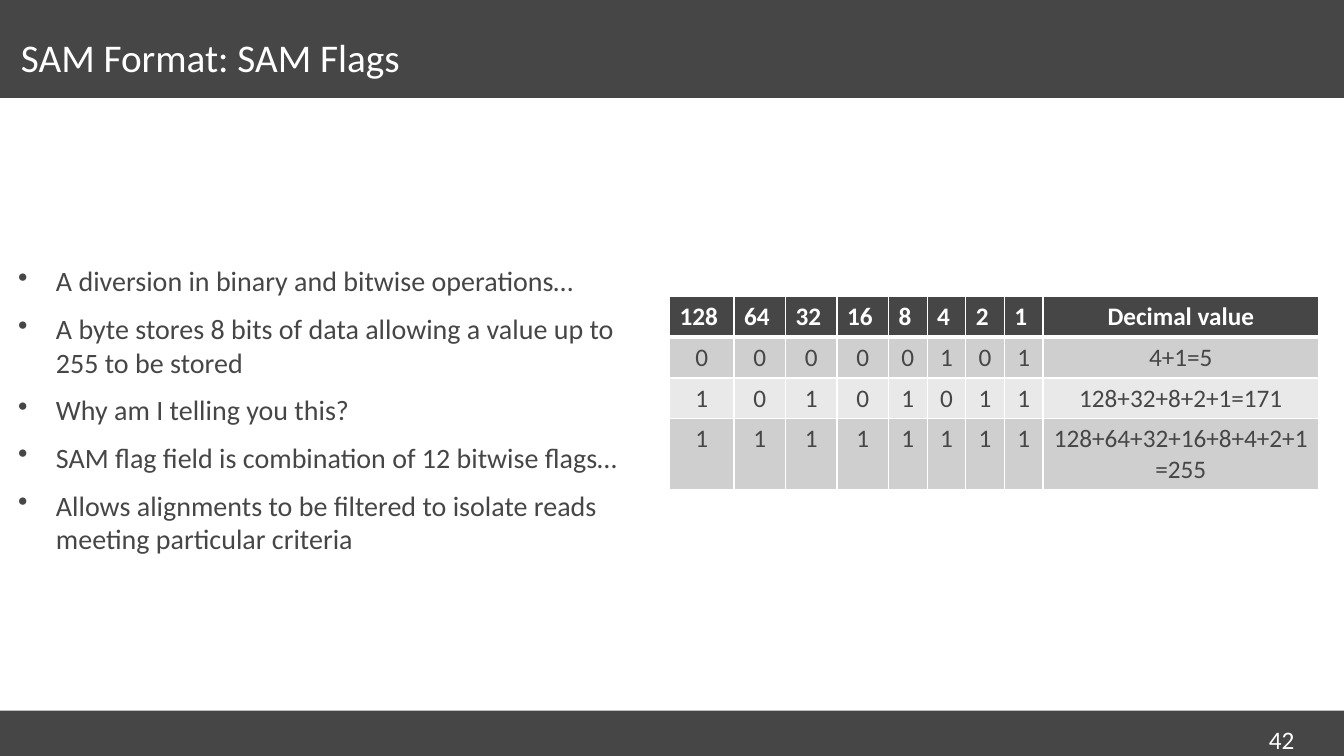
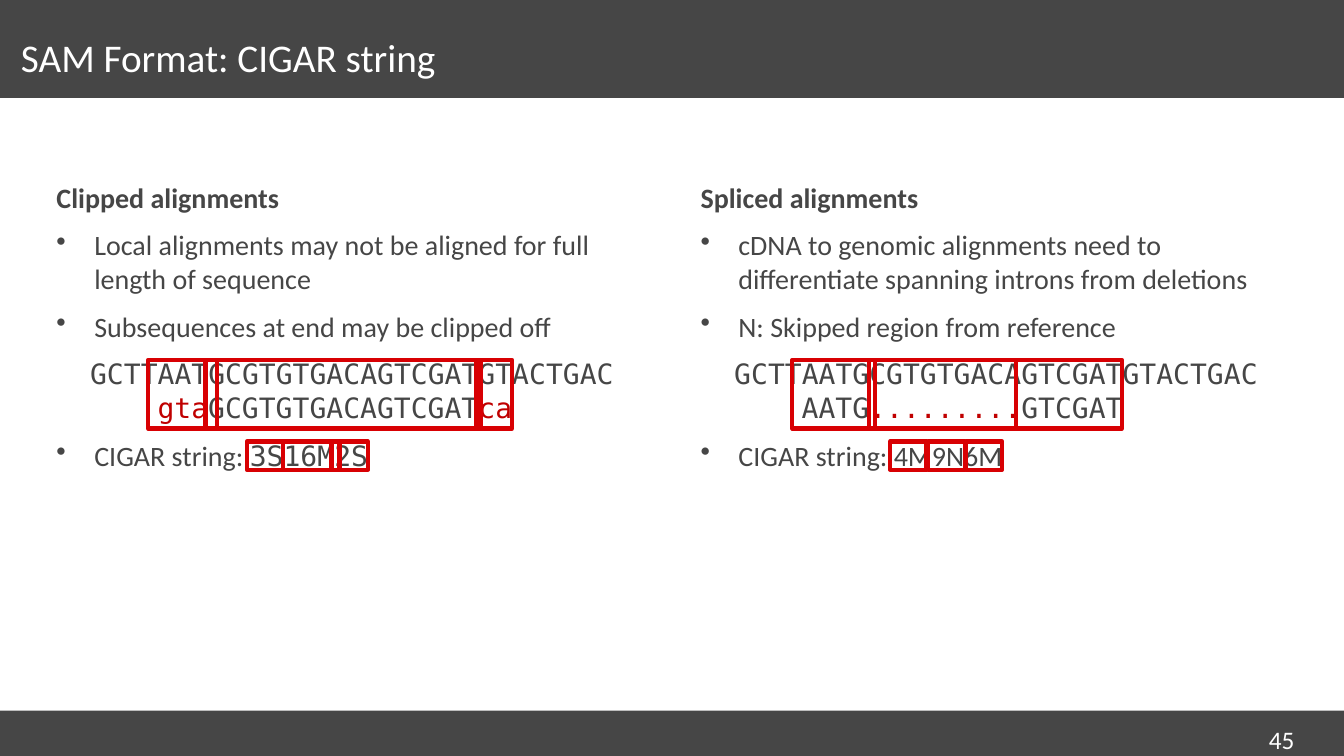
from lxml import etree
from pptx import Presentation
from pptx.dml.color import RGBColor
from pptx.enum.shapes import MSO_SHAPE
from pptx.enum.text import MSO_ANCHOR, MSO_AUTO_SIZE, PP_ALIGN
from pptx.oxml.ns import qn
from pptx.util import Pt

RECT = MSO_SHAPE.RECTANGLE
LEFT, MID = PP_ALIGN.LEFT, PP_ALIGN.CENTER
CENTER, TOP = MSO_ANCHOR.MIDDLE, MSO_ANCHOR.TOP
FIXED = MSO_AUTO_SIZE.NONE

WHITE = RGBColor(0xFF, 0xFF, 0xFF)
DARK = RGBColor(0x46, 0x46, 0x46)
GREY = RGBColor(0xCF, 0xCF, 0xCF)
PALE = RGBColor(0xE9, 0xE9, 0xE9)
RED = RGBColor(0xC0, 0x00, 0x00)
FRAME = RGBColor(0xD8, 0x00, 0x03)

SANS, MONO = "Calibri", "DejaVu Sans Mono"
WIDE, HIGH = 960, 540
HEAD, FOOT = 70, 32.4
HANG = 27
CHAR = 12.04  # advance of one 20 pt monospaced letter


def pts(*nums):
    return [Pt(num) for num in nums]


def style(run, size, color=DARK, face=SANS, bold=False):
    font = run.font
    font.name, font.size, font.bold = face, Pt(size), bold
    font.color.rgb = color


def add_bands(layout, slide):
    """Draw the two bands and move them to the layout, behind its text."""
    tree = layout.element.cSld.spTree
    for top, high in ((0, HEAD), (HIGH - FOOT, FOOT)):
        band = slide.shapes.add_shape(RECT, *pts(0, top, WIDE, high))
        band.shadow.inherit = False
        band.fill.solid()
        band.fill.fore_color.rgb = DARK
        band.line.fill.background()
        tree.insert(2, band.element)


def fit(frame, anchor=TOP):
    frame.word_wrap = True
    frame.auto_size = FIXED
    frame.vertical_anchor = anchor
    frame.margin_left = frame.margin_right = 0
    frame.margin_top = frame.margin_bottom = Pt(3.6)


def add_slide(deck, layout, text, page):
    slide = deck.slides.add_slide(layout)
    title = slide.shapes.title
    title.left, title.top, title.width, title.height = pts(15, 16.5, 830, 54)
    title.text_frame.text = text
    fit(title.text_frame, CENTER)
    para = title.text_frame.paragraphs[0]
    para.alignment, para.line_spacing = LEFT, 0.8
    style(para.runs[0], 28, WHITE)

    label = slide.shapes.add_textbox(*pts(899.3, 514, 50.4, 18))
    label.text_frame.text = page
    label.text_frame.word_wrap = True
    style(label.text_frame.paragraphs[0].runs[0], 18, WHITE)
    return slide


def add_body(slide, box):
    frame = slide.shapes.add_textbox(*pts(*box)).text_frame
    fit(frame)
    return frame


def add_para(frame):
    """Return a spaced paragraph, reusing the empty one of a new box."""
    para = frame.paragraphs[0]
    if para.runs:
        para = frame.add_paragraph()
        para.space_before = Pt(6)
    para.space_after = Pt(4)
    return para


def indent(para, left, first):
    props = para._p.get_or_add_pPr()
    props.set("marL", str(Pt(left)))
    props.set("indent", str(Pt(first)))
    return props


def add_text(para, text, **look):
    run = para.add_run()
    run.text = text
    style(run, 20, **look)


def add_point(frame, text):
    para = add_para(frame)
    props = indent(para, HANG, -HANG)
    tint = etree.SubElement(props, qn("a:buClr"))
    etree.SubElement(tint, qn("a:srgbClr"), val=str(DARK))
    etree.SubElement(props, qn("a:buChar"), char="•")
    add_text(para, text)
    return para


def add_reads(frame, whole, parts):
    """Set a read four letters in, below the reference sequence."""
    para = add_para(frame)
    indent(para, 6 * CHAR, -4 * CHAR)
    add_text(para, whole, face=MONO)
    para.add_line_break()
    for text, color in parts:
        add_text(para, text, color=color, face=MONO)


def add_marks(slide, left, top, marks):
    """Frame each part of a read together with its part of the string."""
    for x, wide, tag, span in marks:
        group = slide.shapes.add_group_shape()
        for box in ((left + x, top + 131.8, wide, 49),
                    (left + tag, top + 190, span, 20.2)):
            mark = group.shapes.add_shape(RECT, *pts(*box))
            mark.shadow.inherit = False
            mark.fill.background()
            mark.line.color.rgb, mark.line.width = FRAME, Pt(3)


def edge(cell, above, below):
    props = cell._tc.get_or_add_tcPr()
    for side, width in zip("LRTB", (1, 1, above, below)):
        line = etree.SubElement(props, qn("a:ln" + side), w=str(Pt(width)))
        fill = etree.SubElement(line, qn("a:solidFill"))
        etree.SubElement(fill, qn("a:srgbClr"), val=str(WHITE))


def add_bits(slide, left, top):
    """Place the table of bits and their decimal values."""
    wides = [46] + [36.8] * 3 + [27.6] * 4 + [197]
    head = [str(2 ** bit) for bit in range(7, -1, -1)] + ["Decimal value"]
    rows = [head] + [[*bits, total] for bits, total in (
        ("00000101", "4+1=5"),
        ("10101011", "128+32+8+2+1=171"),
        ("11111111", "128+64+32+16+8+4+2+1=255"))]
    high = 29.2
    grid = slide.shapes.add_table(
        len(rows), len(wides),
        *pts(left, top, sum(wides), high * len(rows))).table
    for col, wide in zip(grid.columns, wides):
        col.width = Pt(wide)
    for y, row in enumerate(rows):
        grid.rows[y].height = Pt(high)
        first = y == 0
        for x, text in enumerate(row):
            cell = grid.cell(y, x)
            edge(cell, 3 if y == 1 else 1, 3 if first else 1)
            cell.fill.solid()
            cell.fill.fore_color.rgb = DARK if first else (PALE, GREY)[y % 2]
            cell.text_frame.text = text
            para = cell.text_frame.paragraphs[0]
            para.alignment = LEFT if first and x < 8 else MID
            style(para.runs[0], 18, WHITE if first else DARK, bold=first)


def add_column(slide, box, name, points, parts, code, face, marks):
    frame = add_body(slide, box)
    add_text(add_para(frame), name, bold=True)
    for text in points:
        add_point(frame, text)
    add_reads(frame, "GCTTAATGCGTGTGACAGTCGATGTACTGAC", parts)
    add_text(add_point(frame, "CIGAR string: "), code, face=face)
    add_marks(slide, box[0], box[1], marks)


def fill_flags(slide):
    frame = add_body(slide, (13, 185, 446.4, 224))
    for text in (
            "A diversion in binary and bitwise operations…",
            "A byte stores 8 bits of data allowing a value up to 255 "
            "to be stored",
            "Why am I telling you this?",
            "SAM flag field is combination of 12 bitwise flags…",
            "Allows alignments to be filtered to isolate reads meeting "
            "particular criteria"):
        add_point(frame, text)
    add_bits(slide, 478.3, 211.6)


def fill_cigar(slide):
    top, wide, high = 125.3, 419, 363
    add_column(
        slide, (40.3, top, wide, high), "Clipped alignments",
        ("Local alignments may not be aligned for full length of sequence",
         "Subsequences at end may be clipped off"),
        (("gta", RED), ("GCGTGTGACAGTCGAT", DARK), ("ca", RED)),
        "3S16M2S", MONO,
        ((65.5, 49, 136, 26), (106.5, 196.5, 162, 40.3),
         (299.5, 26, 196.5, 26)))
    add_column(
        slide, (500.4, top, wide, high), "Spliced alignments",
        ("cDNA to genomic alignments need to differentiate spanning introns "
         "from deletions",
         "N: Skipped region from reference"),
        (("AATG", DARK), (".........", RED), ("GTCGAT", DARK)),
        "4M9N6M", SANS,
        ((65.5, 59, 135.4, 26), (120.2, 105.2, 162.7, 26),
         (225.4, 75.6, 189.4, 26)))


def main():
    deck = Presentation()
    deck.slide_width, deck.slide_height = pts(WIDE, HIGH)
    layout = deck.slide_layouts[5]
    flags = add_slide(deck, layout, "SAM Format: SAM Flags", "42")
    add_bands(layout, flags)
    fill_flags(flags)
    fill_cigar(add_slide(deck, layout, "SAM Format: CIGAR string", "45"))
    deck.save("out.pptx")


if __name__ == "__main__":
    main()
